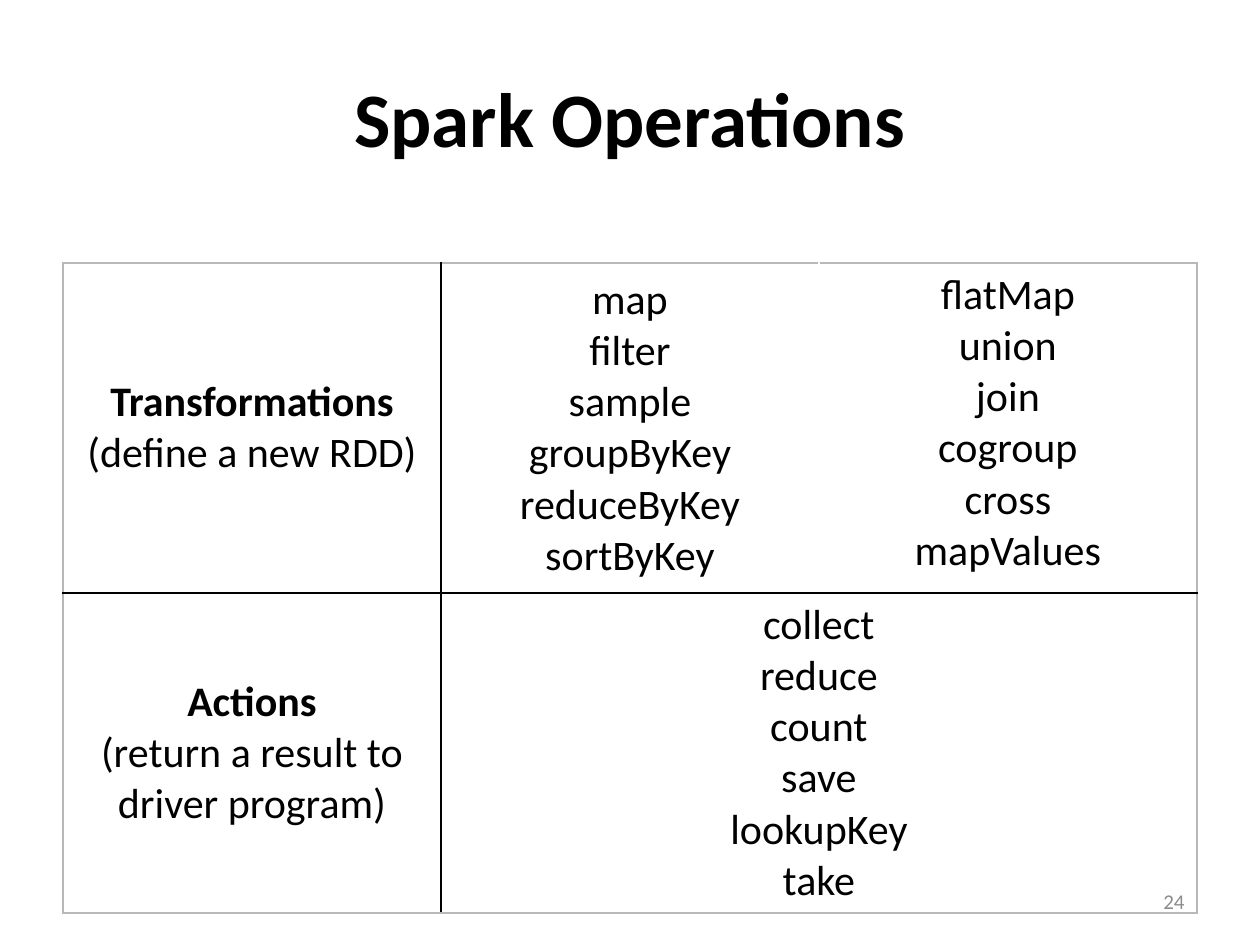
from pptx import Presentation, util as u
from pptx.dml.color import RGBColor
from pptx.enum import text
from pptx.oxml import parse_xml
from pptx.oxml.ns import nsdecls

PX = 914400 // 126
ALIGN = text.PP_ALIGN
MID = text.MSO_ANCHOR.MIDDLE
TOP = text.MSO_ANCHOR.TOP
BLACK, GRAY, WHITE = "000000", "B8B8B8", "FFFFFF"


def write(frame, lines, size, hue=BLACK, bold=(), align=ALIGN.CENTER):
    frame.word_wrap = True
    for i, line in enumerate(lines):
        para = frame.paragraphs[0] if i == 0 else frame.add_paragraph()
        para.text = line
        para.alignment = align
        font = para.font
        font.name, font.size, font.bold = "Calibri", u.Pt(size), i in bold
        font.color.rgb = RGBColor.from_string(hue)


def edge(cell, sides):
    props = cell._tc.get_or_add_tcPr()
    for i, (side, hue) in enumerate(sides.items()):
        props.insert(i, parse_xml(
            f'<a:ln{side} {nsdecls("a")} w="12700"><a:solidFill>'
            f'<a:srgbClr val="{hue}"/></a:solidFill></a:ln{side}>'))


deck = Presentation()
deck.slide_width, deck.slide_height = 1260 * PX, 945 * PX
slide = deck.slides.add_slide(deck.slide_layouts[6])

title = slide.shapes.add_textbox(63 * PX, 38 * PX, 1134 * PX, 157 * PX).text_frame
title.vertical_anchor = MID
write(title, ["Spark Operations"], 44, bold=[0])

table = slide.shapes.add_table(2, 3, 63 * PX, 263 * PX, 1134 * PX, 650 * PX).table
table.first_row = table.horz_banding = False
for row, high in zip(table.rows, (330, 320)):
    row.height = high * PX
for col in table.columns:
    col.width = 378 * PX
table.cell(1, 1).merge(table.cell(1, 2))

cells = [
    (0, 0, MID, [0], ["Transformations", "(define a new RDD)"]),
    (0, 1, MID, [], ["map", "filter", "sample", "groupByKey", "reduceByKey", "sortByKey"]),
    (0, 2, TOP, [], ["flatMap", "union", "join", "cogroup", "cross\vmapValues"]),
    (1, 0, MID, [0], ["Actions", "(return a result to driver program)"]),
    (1, 1, MID, [], ["collect", "reduce", "count\vsave", "lookupKey", "take"]),
]
for r, c, anchor, bold, lines in cells:
    cell = table.cell(r, c)
    cell.vertical_anchor = anchor
    write(cell.text_frame, lines, 24, bold=bold)

for r in range(2):
    for c in range(3):
        cell = table.cell(r, c)
        cell.fill.background()
        last = c == 2 or (r, c) == (1, 1)
        sides = {
            "L": GRAY if c == 0 else BLACK,
            "R": GRAY if last else BLACK,
            "T": GRAY if r == 0 else BLACK,
            "B": GRAY if r == 1 else BLACK,
        }
        if r == 0 and c > 0:
            sides["R" if c == 1 else "L"] = WHITE
        edge(cell, sides)

page = slide.shapes.add_textbox(903 * PX, 876 * PX, 294 * PX, 50 * PX).text_frame
page.vertical_anchor = MID
write(page, ["24"], 12, "8C8C8C", align=ALIGN.RIGHT)

deck.save("out.pptx")
